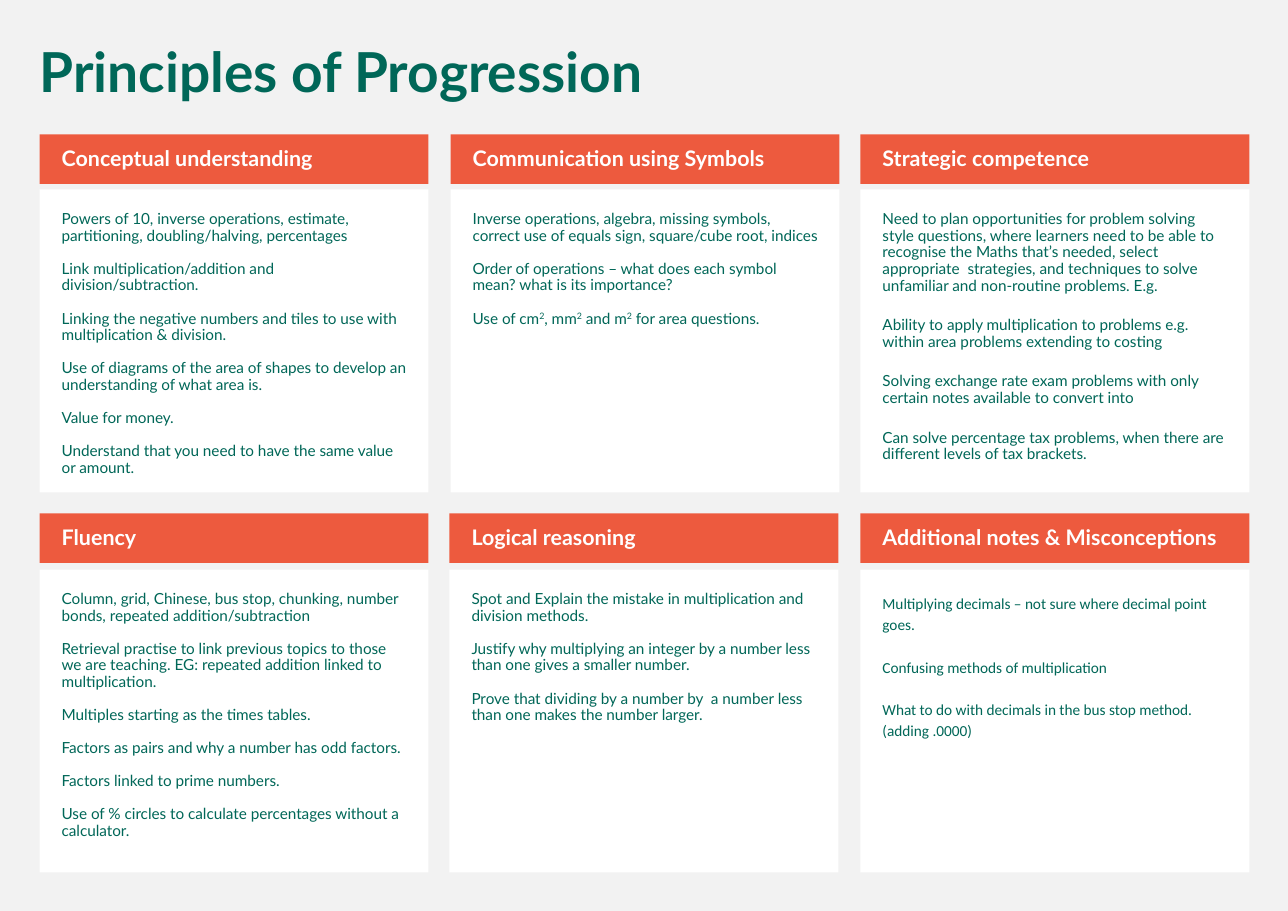
from pptx import Presentation
from pptx.dml.color import RGBColor
from pptx.enum.shapes import MSO_SHAPE as SHAPE
from pptx.enum.text import MSO_ANCHOR as ANCHOR, PP_ALIGN as ALIGN
from pptx.util import Inches, Pt

GREEN, ORANGE, WHITE, GREY = "006758", "ED5A3E", "FFFFFF", "F2F2F2"
TITLE = "Principles of Progression"

# Text between carets is superscript.
CONCEPTUAL = [
    "Powers of 10, inverse operations, estimate, partitioning, doubling/halving, percentages",
    "Link multiplication/addition and division/subtraction.",
    "Linking the negative numbers and tiles to use with multiplication & division.",
    "Use of diagrams of the area of shapes to develop an understanding of what area is.",
    "Value for money.",
    "Understand that you need to have the same value or amount.",
]
SYMBOLS = [
    "Inverse operations, algebra, missing symbols, correct use of equals sign, "
    "square/cube root, indices",
    "Order of operations – what does each symbol mean? what is its importance?",
    "Use of cm^2^, mm^2^ and m^2^ for area questions.",
]
STRATEGIC = [
    "Need to plan opportunities for problem solving style questions, where learners need "
    "to be able to recognise the Maths that’s needed, select appropriate  strategies, and "
    "techniques to solve unfamiliar and non-routine problems. E.g.",
    "Ability to apply multiplication to problems e.g. within area problems extending to costing",
    "Solving exchange rate exam problems with only certain notes available to convert into",
    "Can solve percentage tax problems, when there are different levels of tax brackets.",
]
FLUENCY = [
    "Column, grid, Chinese, bus stop, chunking, number bonds, repeated addition/subtraction",
    "Retrieval practise to link previous topics to those we are teaching. "
    "EG: repeated addition linked to multiplication.",
    "Multiples starting as the times tables.",
    "Factors as pairs and why a number has odd factors.",
    "Factors linked to prime numbers.",
    "Use of % circles to calculate percentages without a calculator.",
]
REASONING = [
    "Spot and Explain the mistake in multiplication and division methods.",
    "Justify why multiplying an integer by a number less than one gives a smaller number.",
    "Prove that dividing by a number by  a number less than one makes the number larger.",
]
NOTES = [
    "Multiplying decimals – not sure where decimal point goes.",
    "Confusing methods of multiplication",
    "What to do with decimals in the bus stop method. (adding .0000)",
]

# Heading, paragraphs, font, line spacing, points between paragraphs
CARDS = [
    [("Conceptual understanding", CONCEPTUAL, "Lato", 0.9, 10.8),
     ("Communication using Symbols", SYMBOLS, "Lato", 0.9, 10.8),
     ("Strategic competence", STRATEGIC, "Lato", 0.9, 15.1)],
    [("Fluency", FLUENCY, "Lato", 0.9, 10.8),
     ("Logical reasoning", REASONING, "Lato", 0.9, 10.8),
     ("Additional notes & Misconceptions", NOTES, "Calibri", 1.15, 14)],
]
# Heading top, body top, left edges
ROWS = [(1.22, 1.72, (0.36, 4.09, 7.81)),
        (4.66, 5.17, (0.36, 4.08, 7.81))]
CARD_W, HEADING_H, BODY_H = 3.53, 0.45, 2.75


def rgb(color):
    return RGBColor.from_string(color)


def add_panel(s, box, fill, insets, anchor):
    sp = s.shapes.add_shape(SHAPE.RECTANGLE, *map(Inches, box))
    sp.shadow.inherit = False
    sp.fill.solid()
    sp.fill.fore_color.rgb = rgb(fill)
    sp.line.fill.background()
    tf = sp.text_frame
    tf.word_wrap = True
    tf.vertical_anchor = anchor
    tf.margin_left, tf.margin_top, tf.margin_right, tf.margin_bottom = map(Inches, insets)
    return tf


def write(tf, texts, font, size, color, bold=False, spacing=0.9, gap=0):
    for i, text in enumerate(texts):
        p = tf.add_paragraph() if i else tf.paragraphs[0]
        p.alignment = ALIGN.LEFT
        p.line_spacing = spacing
        p.space_before = Pt(gap if i else 0)
        p.font.name, p.font.size, p.font.bold = font, Pt(size), bold
        p.font.color.rgb = rgb(color)
        for j, part in enumerate(text.split("^")):
            r = p.add_run()
            r.text = part
            if j % 2:
                r._r.get_or_add_rPr().set("baseline", "30000")


def main():
    prs = Presentation()
    prs.slide_width, prs.slide_height = Inches(11.69), Inches(8.27)
    s = prs.slides.add_slide(prs.slide_layouts[6])
    s.background.fill.solid()
    s.background.fill.fore_color.rgb = rgb(GREY)

    title = s.shapes.add_textbox(*map(Inches, (0.26, 0.36, 11.08, 0.65))).text_frame
    title.word_wrap = True
    write(title, [TITLE], "Lato", 36, GREEN, bold=True)

    for (heading_top, body_top, lefts), cards in zip(ROWS, CARDS):
        for left, (heading, texts, font, spacing, gap) in zip(lefts, cards):
            body = add_panel(s, (left, body_top, CARD_W, BODY_H), WHITE,
                             (0.2, 0.2, 0.2, 0.2), ANCHOR.TOP)
            write(body, texts, font, 10, GREEN, spacing=spacing, gap=gap)
            bar = add_panel(s, (left, heading_top, CARD_W, HEADING_H), ORANGE,
                            (0.2, 0.05, 0.1, 0.05), ANCHOR.MIDDLE)
            write(bar, [heading], "Lato", 14, WHITE, bold=True)

    prs.save("out.pptx")


if __name__ == "__main__":
    main()
